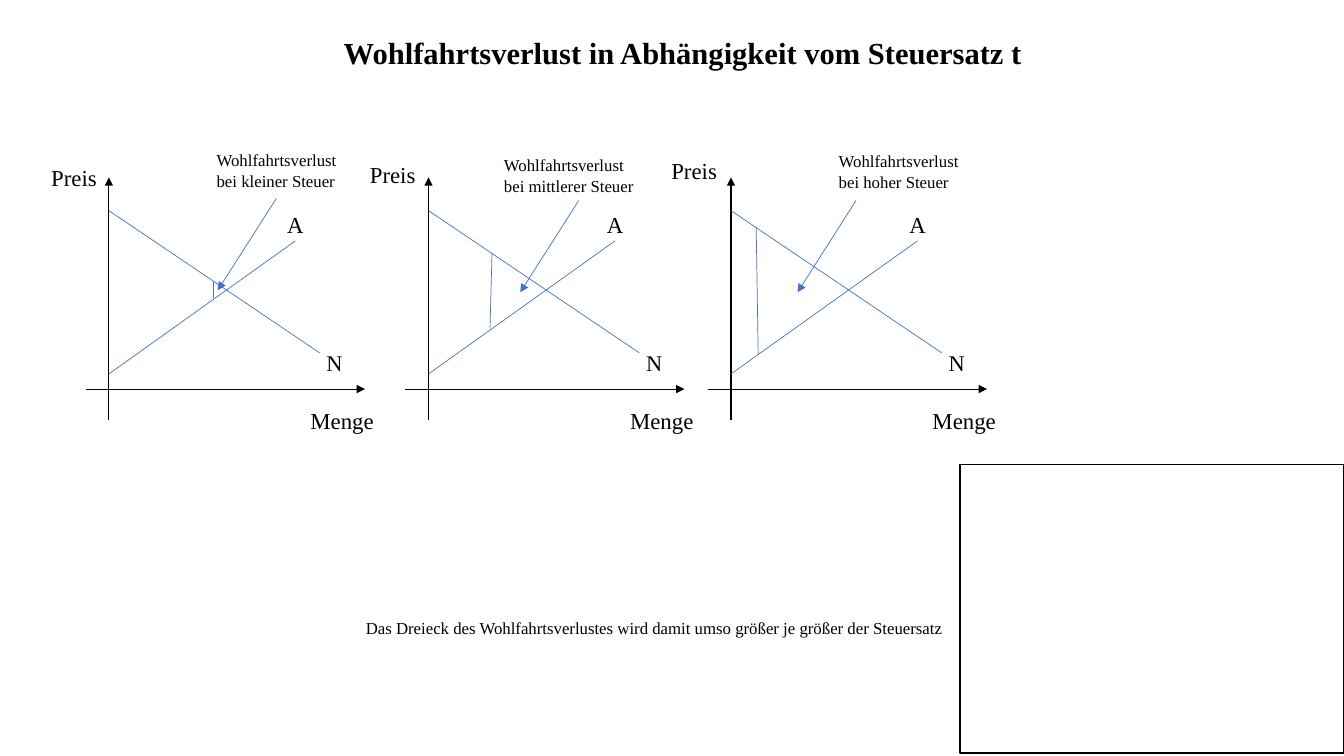
from dataclasses import dataclass

from lxml.etree import SubElement
from pptx import Presentation
from pptx.dml.color import RGBColor as Color
from pptx.enum.shapes import MSO_CONNECTOR as Link, MSO_SHAPE as Form
from pptx.enum.text import MSO_ANCHOR as Anchor, MSO_AUTO_SIZE as Fit, PP_ALIGN as Align
from pptx.oxml.ns import qn
from pptx.util import Pt

SCALE = 9144


@dataclass(frozen=True)
class Theme:
    font: str = "Times New Roman"
    ink: Color = Color(0x00, 0x00, 0x00)
    blue: Color = Color(0x44, 0x72, 0xC4)
    title: float = 21.8
    label: float = 16.3
    curve: float = 16
    note: float = 12
    axis: float = 0.75
    thin: float = 0.5
    frame: float = 1


class Board:
    def __init__(self, slide, theme):
        self.slide = slide
        self.theme = theme

    def px(self, *nums):
        return [num * SCALE for num in nums]

    def text(self, words, box, size, wrap=True):
        shape = self.slide.shapes.add_textbox(*self.px(*box))
        frame = shape.text_frame
        frame.word_wrap = wrap
        frame.auto_size = Fit.SHAPE_TO_FIT_TEXT
        run = frame.paragraphs[0].add_run()
        run.text = words
        run.font.name = self.theme.font
        run.font.size = Pt(size)
        run.font.color.rgb = self.theme.ink
        return frame

    def title(self, words, box):
        frame = self.text(words, box, self.theme.title)
        frame.auto_size = Fit.NONE
        frame.vertical_anchor = Anchor.MIDDLE
        frame.margin_left, frame.margin_right = self.px(9, 9)
        frame.margin_top, frame.margin_bottom = self.px(4, 4)
        line = frame.paragraphs[0]
        line.alignment = Align.CENTER
        line.runs[0].font.bold = True

    def label(self, words, x, y, wide, size=None):
        self.text(words, (x, y, wide, 38), size or self.theme.label, wrap=False)

    def line(self, ends, color, width, head=False):
        link = self.slide.shapes.add_connector(Link.STRAIGHT, *self.px(*ends))
        link.line.color.rgb = color
        link.line.width = Pt(width)
        if head:
            SubElement(link.line._get_or_add_ln(), qn("a:tailEnd"), type="triangle")
        SubElement(link._element.spPr, qn("a:effectLst"))

    def axis(self, *ends):
        self.line(ends, self.theme.ink, self.theme.axis, head=True)

    def curve(self, *ends, head=False):
        self.line(ends, self.theme.blue, self.theme.thin, head)

    def frame(self, box):
        shape = self.slide.shapes.add_shape(Form.RECTANGLE, *self.px(*box))
        shape.shadow.inherit = False
        shape.fill.background()
        shape.line.color.rgb = self.theme.ink
        shape.line.width = Pt(self.theme.frame)

    def graph(self, x, price, level, note, wedge, arrow):
        self.axis(x, 417, x, 176)
        self.axis(x - 23, 386, x + 254, 386)
        self.label("Preis", *price, 66)
        self.label("Menge", x + 190, 399, 85)
        self.curve(x, 371, x + 185, 239)
        self.curve(x, 209, x + 209, 350)
        self.label("A", x + 167, 204, 37)
        self.label("N", x + 206, 341, 37, self.theme.curve)
        left, top = arrow
        self.curve(left, top, left - 58, top + 91, head=True)
        self.text(f"Wohlfahrtsverlust bei {level} Steuer", (*note, 158, 50), self.theme.note)
        self.curve(*wedge)


GRAPHS = [
    (108, (41, 157), "kleiner", (205, 144), (212, 280, 212, 296), (274, 197)),
    (425, (357, 154), "mittlerer", (490, 149), (488, 251, 486, 326), (574, 199)),
    (725, (656, 151), "hoher", (822, 145), (750, 226, 752, 351), (849, 199)),
]


def main():
    deck = Presentation()
    deck.slide_width = 1333 * SCALE
    deck.slide_height = 750 * SCALE
    theme = Theme()
    board = Board(deck.slides.add_slide(deck.slide_layouts[6]), theme)
    board.title("Wohlfahrtsverlust in Abhängigkeit vom Steuersatz t", (175, 11, 1005, 81))
    for graph in GRAPHS:
        board.graph(*graph)
    board.text(
        "Das Dreieck des Wohlfahrtsverlustes wird damit umso größer je größer der Steuersatz",
        (353, 608, 713, 30),
        theme.note,
    )
    board.frame((952, 461, 381, 286))
    deck.save("out.pptx")


if __name__ == "__main__":
    main()
